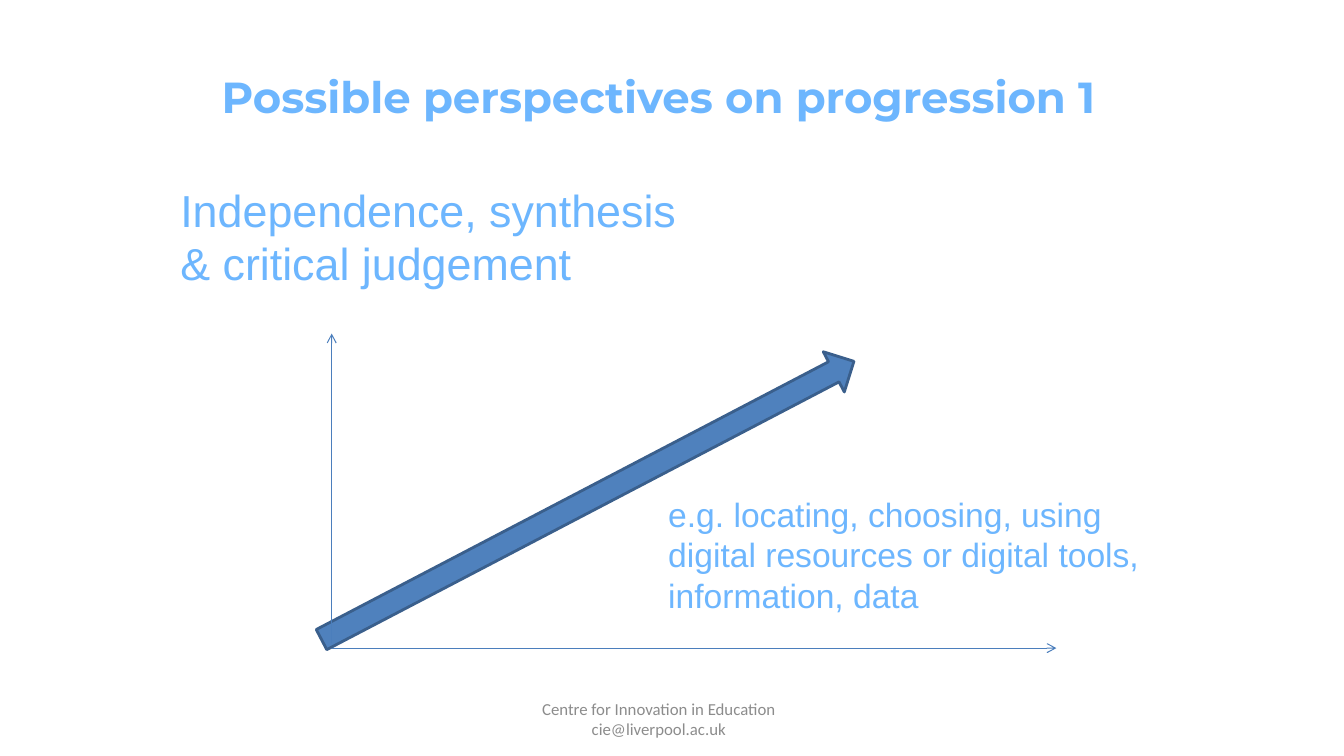
from lxml import etree
from pptx import Presentation
from pptx.dml.color import RGBColor
from pptx.enum.shapes import MSO_CONNECTOR, MSO_SHAPE
from pptx.enum.text import MSO_ANCHOR, MSO_AUTO_SIZE, PP_ALIGN
from pptx.oxml.ns import qn
from pptx.util import Inches, Pt

STRAIGHT, RIGHT_ARROW = MSO_CONNECTOR.STRAIGHT, MSO_SHAPE.RIGHT_ARROW
TOP, MIDDLE = MSO_ANCHOR.TOP, MSO_ANCHOR.MIDDLE
LEFT, CENTER = PP_ALIGN.LEFT, PP_ALIGN.CENTER
NO_FIT = MSO_AUTO_SIZE.NONE
TITLE_ONLY = 5
COLORS = {"text": "6DB6FE", "footer": "8C8C8C", "arrow": "4F81BD",
          "outline": "3A5F8C", "axis": "4B7EBC"}


def rgb(name):
    return RGBColor.from_string(COLORS[name])


class Deck:
    """Slide builder; positions and sizes are percentages of the slide."""

    def __init__(self):
        self.prs = Presentation()
        self.prs.slide_width, self.prs.slide_height = Inches(13.33), Inches(7.5)
        self.s = self.prs.slides.add_slide(self.prs.slide_layouts[TITLE_ONLY])

    def x(self, share):
        return round(self.prs.slide_width * share / 100)

    def y(self, share):
        return round(self.prs.slide_height * share / 100)

    def box(self, left, top, width, height):
        return self.x(left), self.y(top), self.x(width), self.y(height)

    def fill_text(self, sp, text, size, font, color, bold, align, anchor):
        tf = sp.text_frame
        tf.word_wrap, tf.auto_size, tf.vertical_anchor = True, NO_FIT, anchor
        tf.text = text
        p = tf.paragraphs[0]
        p.alignment = align
        p.font.size, p.font.name, p.font.bold = Pt(size), font, bold
        p.font.color.rgb = rgb(color)

    def title(self, text, box):
        sp = self.s.shapes.title
        sp.left, sp.top, sp.width, sp.height = self.box(*box)
        self.fill_text(sp, text, 31, "Montserrat", "text", True, CENTER, MIDDLE)
        sp.text_frame.margin_bottom = Inches(0.57)

    def text(self, text, box, size, font="Arial", color="text",
             align=LEFT, anchor=TOP):
        sp = self.s.shapes.add_textbox(*self.box(*box))
        self.fill_text(sp, text, size, font, color, False, align, anchor)

    def block_arrow(self, box, rotation):
        sp = self.s.shapes.add_shape(RIGHT_ARROW, *self.box(*box))
        sp.rotation = rotation
        sp.shadow.inherit = False
        sp.fill.solid()
        sp.fill.fore_color.rgb = rgb("arrow")
        sp.line.color.rgb = rgb("outline")
        sp.line.width = Pt(2)

    def axis(self, x1, y1, x2, y2):
        """Thin line with an open arrowhead at its second point."""
        axis = self.s.shapes.add_connector(
            STRAIGHT, self.x(x1), self.y(y1), self.x(x2), self.y(y2))
        axis.line.color.rgb = rgb("axis")
        axis.line.width = Pt(0.75)
        props = axis.element.spPr
        etree.SubElement(props.find(qn("a:ln")), qn("a:tailEnd"), type="arrow")
        etree.SubElement(props, qn("a:effectLst"))


def main():
    axis_x, axis_y = 24.68, 85.73
    deck = Deck()
    deck.title("Possible perspectives on progression 1", (3.98, 7.87, 90, 16.67))
    deck.text("Centre for Innovation in Education cie@liverpool.ac.uk",
              (37.13, 92.4, 23.78, 5.33), 12, "Calibri", "footer", CENTER, MIDDLE)
    deck.text("e.g. locating, choosing, using digital resources or digital tools, "
              "information, data", (48.98, 64.67, 36.98, 17.47), 24)
    deck.block_arrow((21.38, 63.2, 44.7, 6), 332.4)
    deck.axis(axis_x, 85.07, axis_x, 44.13)
    deck.axis(axis_x, axis_y, 78.6, axis_y)
    deck.text("Independence, synthesis\v& critical judgement",
              (12.68, 23.47, 41.63, 22.93), 32)
    deck.prs.save("out.pptx")


if __name__ == "__main__":
    main()
